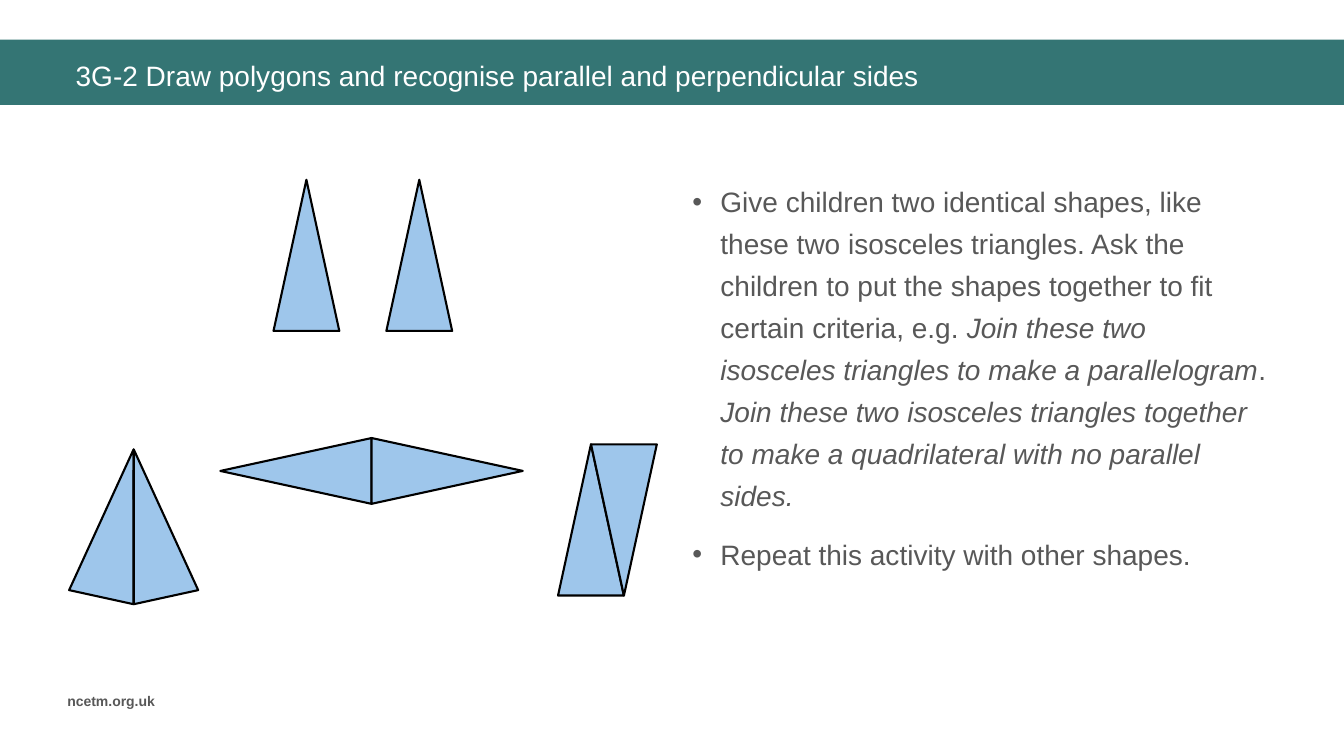
from pptx import Presentation
from pptx.dml.color import RGBColor
from pptx.enum.shapes import MSO_SHAPE
from pptx.enum.text import MSO_ANCHOR, MSO_AUTO_SIZE, PP_ALIGN
from pptx.util import Pt

HUES = {"band": "347574", "text": "585858", "title": "FFFFFF",
        "fill": "9EC6EB", "edge": "000000"}


def hue(name):
    return RGBColor.from_string(HUES[name])


def write(para, text, size, tint, bold=False, slant=False):
    """Add one formatted run to a paragraph."""
    run = para.add_run()
    run.text = text
    font = run.font
    font.name, font.size = "Arial", Pt(size)
    font.bold, font.italic = bold, slant
    font.color.rgb = hue(tint)


deck = Presentation()
deck.slide_width, deck.slide_height = Pt(960), Pt(540)
slide = deck.slides.add_slide(deck.slide_layouts[1])
shapes = slide.shapes
title, body = slide.placeholders

# Title band, placed behind the title
band = shapes.add_shape(MSO_SHAPE.RECTANGLE, 0, Pt(28.3), Pt(960), Pt(46.7))
band.shadow.inherit = False
band.fill.solid()
band.fill.fore_color.rgb = hue("band")
band.line.fill.background()
title.element.addprevious(band.element)

title.left, title.top, title.width, title.height = Pt(46.8), Pt(36.5), Pt(887), Pt(34)
frame = title.text_frame
frame.auto_size = MSO_AUTO_SIZE.NONE
frame.vertical_anchor = MSO_ANCHOR.MIDDLE
para = frame.paragraphs[0]
para.alignment = PP_ALIGN.LEFT
write(para, "3G-2 Draw polygons and recognise parallel and perpendicular sides", 20, "title")

# Pairs of triangles: middle x and y, distance between centres, two rotations
BASE, TALL = 47, 108
PAIRS = [
    (259.2, 182.4, 80.6, (0, 0)),
    (95.5, 373.8, 23.2, (12.35, -12.35)),
    (265.4, 336.4, TALL, (-90, 90)),
    (433.9, 371.4, BASE / 2, (0, 180)),
]
for mid, row, gap, turns in PAIRS:
    for side, turn in zip((-0.5, 0.5), turns):
        left = mid + side * gap - BASE / 2
        tri = shapes.add_shape(MSO_SHAPE.ISOSCELES_TRIANGLE, Pt(left),
                               Pt(row - TALL / 2), Pt(BASE), Pt(TALL))
        tri.rotation = turn
        tri.shadow.inherit = False
        tri.fill.solid()
        tri.fill.fore_color.rgb = hue("fill")
        tri.line.color.rgb = hue("edge")
        tri.line.width = Pt(1.5)

# Bulleted guidance: each item is a list of (text, italic) runs
ITEMS = [
    [("Give children two identical shapes, like these two isosceles triangles. "
      "Ask the children to put the shapes together to fit certain criteria, e.g. ", False),
     ("Join these two isosceles triangles to make a parallelogram", True),
     (". ", False),
     ("Join these two isosceles triangles together to make a quadrilateral "
      "with no parallel sides.", True)],
    [("Repeat this activity with other shapes.", False)],
]
body.left, body.top, body.width, body.height = Pt(487.4), Pt(122.4), Pt(425), Pt(323)
frame = body.text_frame
frame.auto_size = MSO_AUTO_SIZE.NONE
for index, item in enumerate(ITEMS):
    para = frame.add_paragraph() if index else frame.paragraphs[0]
    props = para._p.get_or_add_pPr()
    props.set("marL", str(Pt(20)))
    props.set("indent", str(Pt(-20)))
    para.line_spacing = 1.25
    para.space_before = Pt(6 if index else 0)
    para.space_after = Pt(6)
    for text, slant in item:
        write(para, text, 20, "text", slant=slant)

# Footer
foot = shapes.add_textbox(Pt(41), Pt(491), Pt(87), Pt(19.4))
foot.text_frame.word_wrap = True
write(foot.text_frame.paragraphs[0], "ncetm.org.uk", 10, "text", bold=True)

deck.save("out.pptx")
